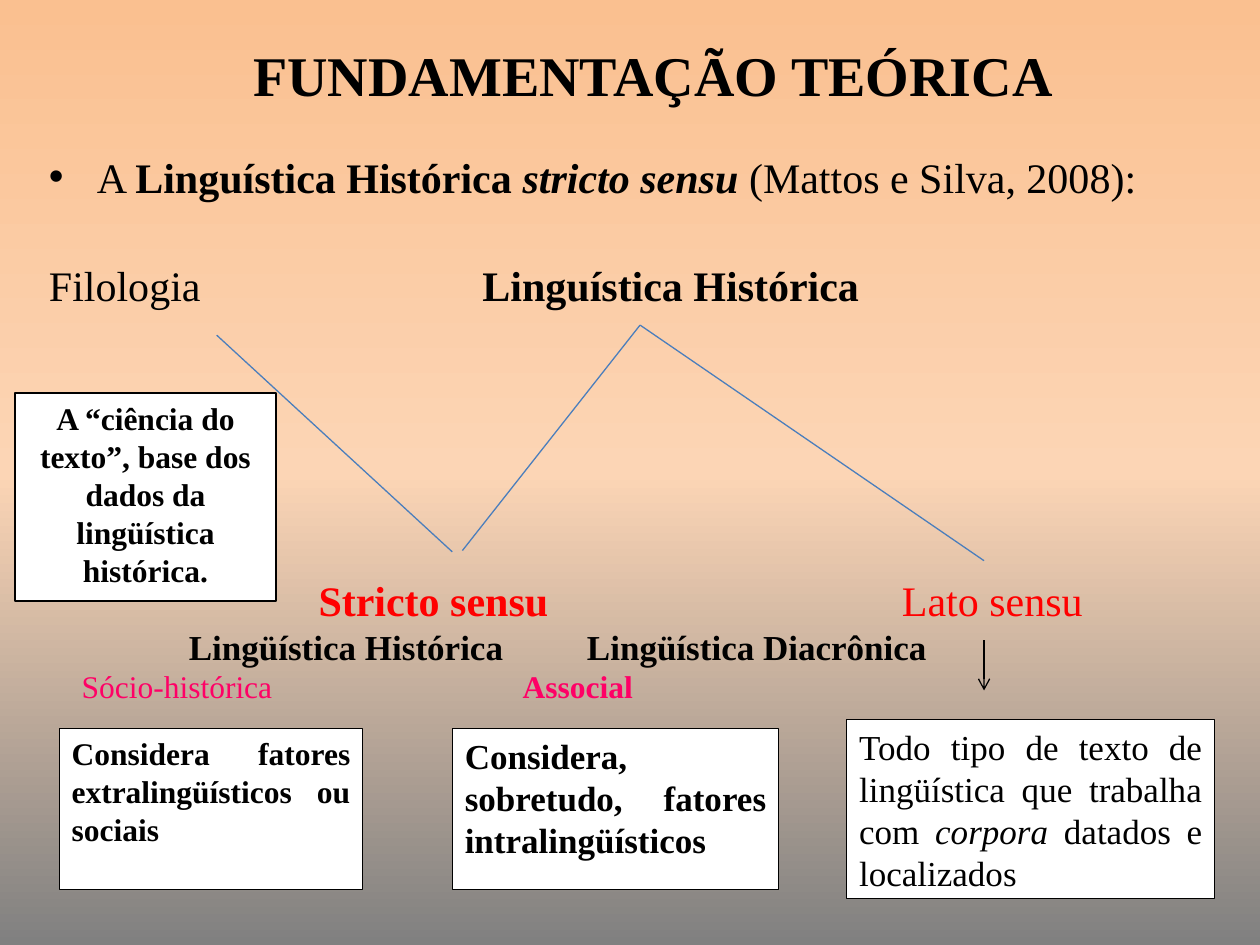
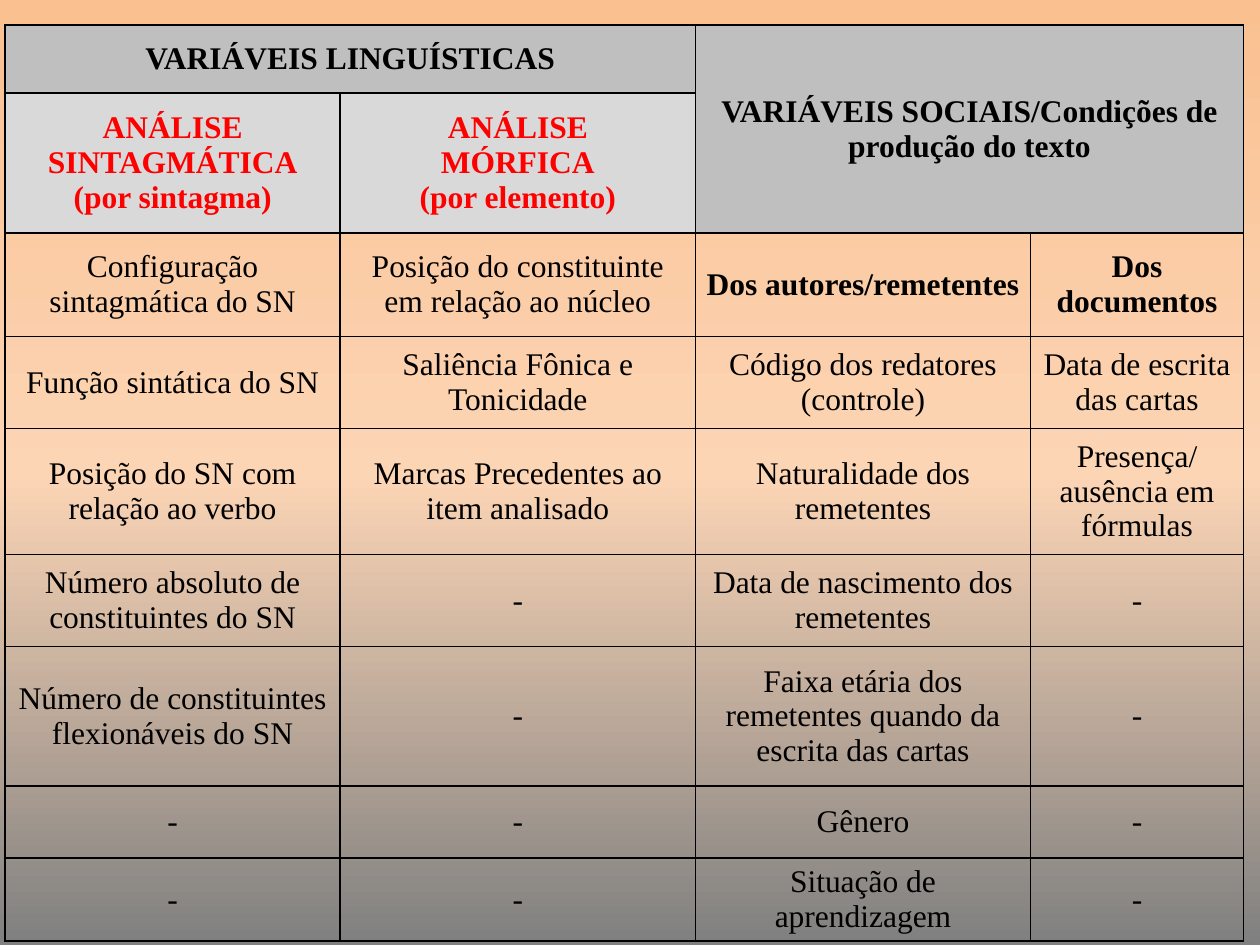
"""Build two slides on historical linguistics: a branching diagram and a table of variables."""
from lxml import etree
from pptx import Presentation
from pptx import util as u
from pptx.dml.color import RGBColor
from pptx.enum import shapes, text
from pptx.oxml.ns import qn

FONT = "Times New Roman"
COLORS = {"ink": "000000", "paper": "FFFFFF", "branch": "4B7EBC", "red": "FF0000",
          "pink": "FF0066", "head": "BFBFBF", "subhead": "D9D9D9"}
BACKGROUND = [(0, "FAC090"), (50, "FCD5B5"), (100, "808080")]
ALIGN = text.PP_ALIGN
MIDDLE = text.MSO_ANCHOR.MIDDLE

TITLE = "FUNDAMENTAÇÃO TEÓRICA"
INTRO = [("A ", ""), ("Linguística Histórica ", "b"), ("stricto sensu ", "bi"),
         ("(Mattos e Silva, 2008):", "")]
ROOTS = [("Filologia", ""), ("\tLinguística Histórica", "b")]
LABELS = [
    (24, "red", [2.0, 6.63], [("\tStricto sensu", "b"), ("\tLato sensu", "")]),
    (20, "ink", [0.97, 4.13], [("\tLingüística Histórica", "b"), ("\tLingüística Diacrônica", "b")]),
    (18, "pink", [0.12, 3.62], [("\tSócio-histórica", ""), ("\tAssocial", "b")]),
]
NOTES = [
    ((0.12, 3.12, 2.07, 1.65), 18, ALIGN.CENTER,
     [("A “ciência do texto”, base dos dados da lingüística histórica.", "b")]),
    ((6.72, 5.71, 2.92, 1.42), 20, ALIGN.JUSTIFY,
     [("Todo tipo de texto de lingüística que trabalha com ", ""), ("corpora ", "i"),
      ("datados e localizados", "")]),
    ((0.47, 5.78, 2.41, 1.28), 18, ALIGN.JUSTIFY,
     [("Considera fatores extralingüísticos ou sociais", "b")]),
    ((3.59, 5.78, 2.59, 1.28), 20, ALIGN.JUSTIFY,
     [("Considera, sobretudo, fatores intralingüísticos", "b")]),
]
BRANCHES = [((1.72, 2.66), (3.59, 4.38)), ((3.67, 4.37), (5.08, 2.58)),
            ((5.08, 2.58), (7.81, 4.45))]
ARROW = ((7.81, 5.08), (7.81, 5.48))

COLUMNS = [2.66, 2.82, 2.66, 1.69]
ROWS = [0.54, 1.11, 0.82, 0.73, 1.0, 0.73, 1.11, 0.57, 0.66]
MERGES = [((0, 0), (0, 1)), ((0, 2), (1, 3))]
VARIABLES = [
    ["VARIÁVEIS LINGUÍSTICAS", "", "VARIÁVEIS SOCIAIS/Condições de produção do texto", ""],
    ["ANÁLISE SINTAGMÁTICA\n(por sintagma)", "ANÁLISE\nMÓRFICA\n(por elemento)", "", ""],
    ["Configuração sintagmática do SN", "Posição do constituinte em relação ao núcleo",
     "Dos autores/remetentes", "Dos documentos"],
    ["Função sintática do SN", "Saliência Fônica e Tonicidade",
     "Código dos redatores (controle)", "Data de escrita das cartas"],
    ["Posição do SN com relação ao verbo", "Marcas Precedentes ao item analisado",
     "Naturalidade dos remetentes", "Presença/ausência em fórmulas"],
    ["Número absoluto de constituintes do SN", "-", "Data de nascimento dos remetentes", "-"],
    ["Número de constituintes flexionáveis do SN", "-",
     "Faixa etária dos remetentes quando da escrita das cartas", "-"],
    ["-", "-", "Gênero", "-"],
    ["-", "-", "Situação de aprendizagem", "-"],
]


def rgb(name):
    return RGBColor.from_string(COLORS[name])


def inches(values):
    return [u.Inches(v) for v in values]


def style(r, size, color="ink", marks=""):
    r.font.name, r.font.size = FONT, u.Pt(size)
    r.font.color.rgb = rgb(color)
    r.font.bold, r.font.italic = "b" in marks, "i" in marks


def write(p, runs, size, color="ink"):
    for words, marks in runs:
        r = p.add_run()
        r.text = words
        style(r, size, color, marks)


def add_tabs(p, stops):
    tabs = etree.SubElement(p._p.get_or_add_pPr(), qn("a:tabLst"))
    for stop in stops:
        etree.SubElement(tabs, qn("a:tab"), pos=str(u.Inches(stop)), algn="l")


def add_bullet(p, indent):
    pPr = p._p.get_or_add_pPr()
    pPr.set("marL", str(u.Inches(indent)))
    pPr.set("indent", str(-u.Inches(indent)))
    etree.SubElement(pPr, qn("a:buFont"), typeface="Arial")
    etree.SubElement(pPr, qn("a:buChar"), char="•")


def add_text(s, at):
    tf = s.shapes.add_textbox(*inches(at)).text_frame
    tf.word_wrap = True
    return tf


def add_line(s, ends, color, arrow=False):
    start, end = ends
    line = s.shapes.add_connector(shapes.MSO_CONNECTOR.STRAIGHT, *inches(start + end))
    line.line.color.rgb, line.line.width = rgb(color), u.Pt(0.75)
    spPr = line._element.spPr
    if arrow:
        etree.SubElement(spPr.get_or_add_ln(), qn("a:tailEnd"), type="arrow")
    etree.SubElement(spPr, qn("a:effectLst"))


def add_note(s, at, size, align, runs):
    sp = s.shapes.add_shape(shapes.MSO_SHAPE.RECTANGLE, *inches(at))
    sp.shadow.inherit = False
    sp.fill.solid()
    sp.fill.fore_color.rgb = rgb("paper")
    sp.line.color.rgb, sp.line.width = rgb("ink"), u.Pt(0.75)
    tf = sp.text_frame
    tf.word_wrap, tf.vertical_anchor = True, text.MSO_ANCHOR.TOP
    p = tf.paragraphs[0]
    p.alignment = align
    write(p, runs, size)


def set_background(master):
    fill = master.background.fill
    fill.gradient()
    fill.gradient_angle = 270
    stops = master.element.xpath(".//p:bg//a:gsLst")[0]
    for stop in list(stops):
        stops.remove(stop)
    for percent, color in BACKGROUND:
        stop = etree.SubElement(stops, qn("a:gs"), pos=str(percent * 1000))
        etree.SubElement(stop, qn("a:srgbClr"), val=color)


def add_diagram_slide(prs):
    s = prs.slides.add_slide(prs.slide_layouts[5])
    title = s.shapes.title
    title.left, title.top, title.width, title.height = inches((0.5, 0.09, 9, 1.25))
    tf = title.text_frame
    tf.text = TITLE
    tf.vertical_anchor = MIDDLE
    tf.margin_left, tf.margin_bottom = inches((0.47, 0.3))
    tf.paragraphs[0].alignment = ALIGN.CENTER
    style(tf.paragraphs[0].runs[0], 32, marks="b")

    tf = add_text(s, (0.29, 1.15, 9.11, 1.4))
    intro, roots = tf.paragraphs[0], tf.add_paragraph()
    add_bullet(intro, 0.38)
    write(intro, INTRO, 24)
    roots.space_before = u.Pt(33)
    add_tabs(roots, [3.44])
    write(roots, ROOTS, 24)

    for branch in BRANCHES:
        add_line(s, branch, "branch")
    tf = add_text(s, (0.43, 4.51, 9.41, 1.14))
    tf.vertical_anchor = MIDDLE
    for i, (size, color, stops, runs) in enumerate(LABELS):
        p = tf.add_paragraph() if i else tf.paragraphs[0]
        add_tabs(p, stops)
        write(p, runs, size, color)
    for note in NOTES:
        add_note(s, *note)
    add_line(s, ARROW, "ink", arrow=True)


def add_borders(cell):
    tcPr = cell._tc.get_or_add_tcPr()
    for side in ("lnL", "lnR", "lnT", "lnB"):
        ln = etree.SubElement(tcPr, qn(f"a:{side}"), w=str(u.Pt(1)))
        fill = etree.SubElement(ln, qn("a:solidFill"))
        etree.SubElement(fill, qn("a:srgbClr"), val=COLORS["ink"])


def format_cell(cell, row, col):
    add_borders(cell)
    if row < 2:
        cell.fill.solid()
        cell.fill.fore_color.rgb = rgb("subhead" if row == 1 and col < 2 else "head")
    else:
        cell.fill.background()
    cell.vertical_anchor = MIDDLE
    cell.margin_left = cell.margin_right = u.Inches(0.07)
    cell.margin_top = cell.margin_bottom = 0
    bold = row < 2 or (row == 2 and col > 1)
    for p in cell.text_frame.paragraphs:
        p.alignment = ALIGN.CENTER
        for r in p.runs:
            style(r, 18, "red" if row == 1 else "ink", "b" if bold else "")


def add_table_slide(prs):
    s = prs.slides.add_slide(prs.slide_layouts[6])
    at = inches((0.04, 0.2, sum(COLUMNS), sum(ROWS)))
    table = s.shapes.add_table(len(ROWS), len(COLUMNS), *at).table
    table.first_row = table.horz_banding = False
    for col, width in zip(table.columns, COLUMNS):
        col.width = u.Inches(width)
    for row, height in zip(table.rows, ROWS):
        row.height = u.Inches(height)
    for i, words in enumerate(VARIABLES):
        for j, word in enumerate(words):
            cell = table.cell(i, j)
            cell.text_frame.text = word
            format_cell(cell, i, j)
    for first, last in MERGES:
        table.cell(*first).merge(table.cell(*last))


def main():
    prs = Presentation()
    prs.slide_width, prs.slide_height = inches((10, 7.5))
    set_background(prs.slide_master)
    add_diagram_slide(prs)
    add_table_slide(prs)
    prs.save("out.pptx")


if __name__ == "__main__":
    main()
